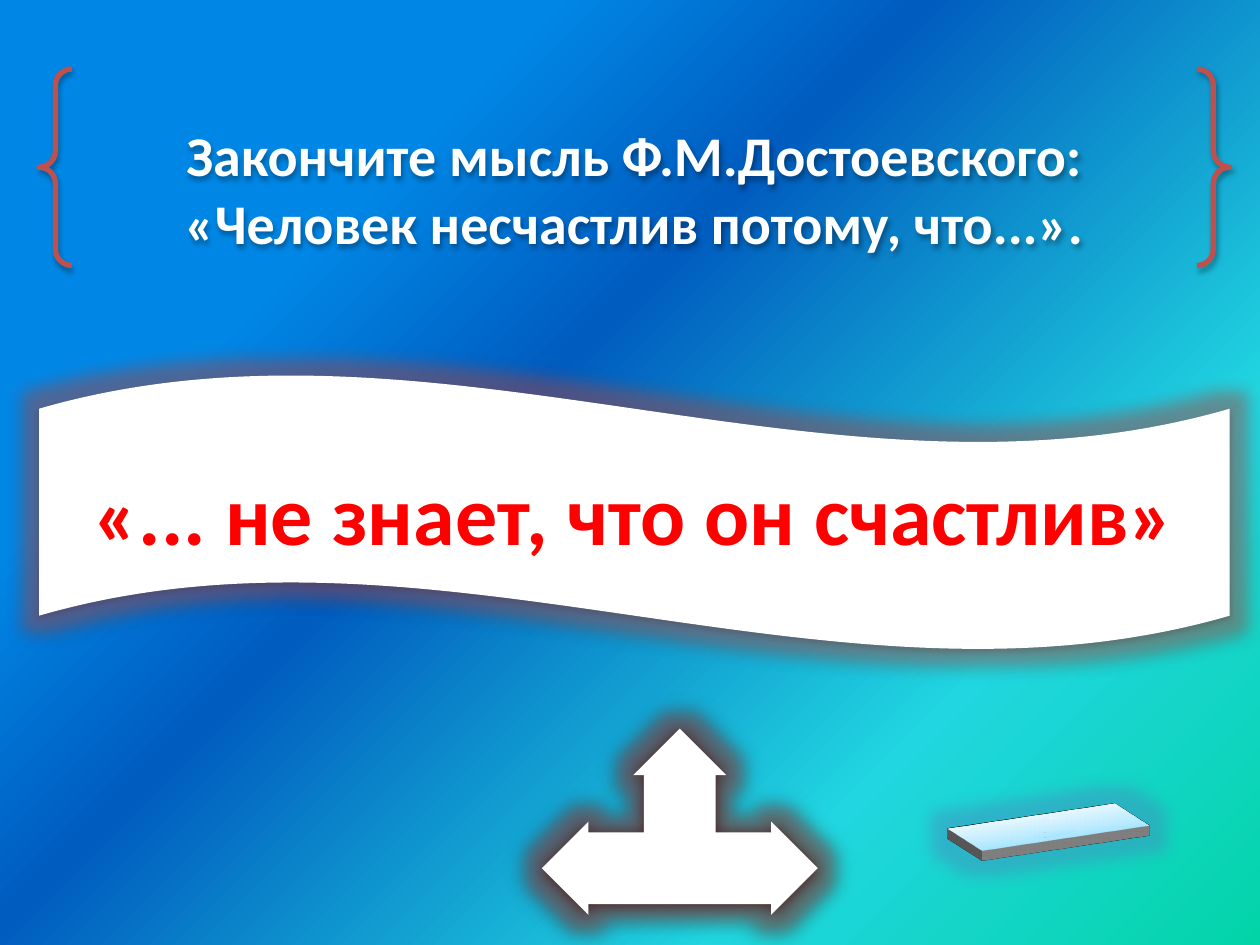
from dataclasses import dataclass
from typing import Optional

from lxml import etree
from pptx import Presentation
from pptx import util as u
from pptx.dml.color import RGBColor
from pptx.enum import shapes, text
from pptx.oxml import parse_xml
from pptx.oxml.ns import nsdecls, qn

WIDTH, HEIGHT = 10, 7.5
COLORS = {
    "white": "FFFFFF", "black": "000000", "red": "FF0000",
    "brick": "C0504D", "steel": "4F81BD",
    "mint": "03D4A8", "aqua": "21D6E0", "navy": "005CBF", "azure": "0087E6",
    "sky": "A7E6FF", "ice": "C1EDFF", "frost": "E7F8FF",
}
KINDS = shapes.MSO_SHAPE


@dataclass(frozen=True)
class Shadow:
    alpha: int
    blur: float
    distance: float
    angle: int = 90


@dataclass(frozen=True)
class Glow:
    color: str
    alpha: int
    radius: float


@dataclass(frozen=True)
class Caption:
    words: str
    size: int
    color: str
    top_margin: float = 0.05
    shadow: Optional[Shadow] = None


@dataclass(frozen=True)
class Figure:
    kind: int
    left: float
    top: float
    width: float
    height: float
    shadow: Shadow
    fill: Optional[str] = None
    line: Optional[str] = None
    line_width: float = 0
    glow: Optional[Glow] = None
    caption: Optional[Caption] = None
    adjustments: tuple = ()


def rgb(name: str) -> RGBColor:
    return RGBColor.from_string(COLORS[name])


def gradient(stops: list, direction: str):
    items = "".join(
        f'<a:gs pos="{share * 1000}"><a:srgbClr val="{COLORS[name]}"/></a:gs>'
        for share, name in stops
    )
    return parse_xml(
        f'<a:gradFill {nsdecls("a")} rotWithShape="1">'
        f"<a:gsLst>{items}</a:gsLst>{direction}</a:gradFill>"
    )


def add_color(parent, name: str, alpha: int) -> None:
    color = etree.SubElement(parent, qn("a:srgbClr"), val=COLORS[name])
    etree.SubElement(color, qn("a:alpha"), val=str(alpha * 1000))


def add_shadow(effects, shadow: Shadow) -> None:
    outer = etree.SubElement(
        effects, qn("a:outerShdw"), blurRad=str(u.Pt(shadow.blur)),
        dist=str(u.Pt(shadow.distance)), dir=str(shadow.angle * 60000),
        algn="ctr", rotWithShape="0",
    )
    add_color(outer, "black", shadow.alpha)


def write_caption(box, caption: Caption) -> None:
    frame = box.text_frame
    frame.word_wrap = True
    frame.margin_top = u.Inches(caption.top_margin)
    frame.vertical_anchor = text.MSO_ANCHOR.MIDDLE
    para = frame.paragraphs[0]
    para.alignment = text.PP_ALIGN.CENTER
    para.font.name = "Calibri"
    para.font.size = u.Pt(caption.size)
    para.font.bold = True
    para.font.color.rgb = rgb(caption.color)
    span = para.add_run()
    span.text = caption.words
    if caption.shadow:
        span.font.fill.solid()
        span.font.fill.fore_color.rgb = rgb(caption.color)
        effects = etree.SubElement(span.font._element, qn("a:effectLst"))
        add_shadow(effects, caption.shadow)


def draw(page, figure: Figure):
    box = page.shapes.add_shape(
        figure.kind,
        u.Inches(figure.left * WIDTH), u.Inches(figure.top * HEIGHT),
        u.Inches(figure.width * WIDTH), u.Inches(figure.height * HEIGHT),
    )
    for index, value in enumerate(figure.adjustments):
        box.adjustments[index] = value
    if figure.fill:
        box.fill.solid()
        box.fill.fore_color.rgb = rgb(figure.fill)
    else:
        box.fill.background()
    if figure.line:
        box.line.color.rgb = rgb(figure.line)
        box.line.width = u.Pt(figure.line_width)
    else:
        box.line.fill.background()
    box.shadow.inherit = False
    effects = box._element.spPr.find(qn("a:effectLst"))
    if figure.glow:
        glow = etree.SubElement(effects, qn("a:glow"), rad=str(u.Pt(figure.glow.radius)))
        add_color(glow, figure.glow.color, figure.glow.alpha)
    add_shadow(effects, figure.shadow)
    if figure.caption:
        write_caption(box, figure.caption)
    return box


def tilt(box) -> None:
    properties = box._element.spPr
    properties.append(parse_xml(
        f'<a:scene3d {nsdecls("a")}><a:camera prst="isometricOffAxis1Top"/>'
        '<a:lightRig rig="threePt" dir="t"/></a:scene3d>'
    ))
    properties.append(parse_xml(f'<a:sp3d {nsdecls("a")} extrusionH="76200"/>'))


def paint_background(page) -> None:
    page.background.fill.solid()
    properties = page._element.cSld.find(qn("p:bg")).find(qn("p:bgPr"))
    stops = [(0, "mint"), (25, "aqua"), (58, "navy"), (75, "azure"), (100, "azure")]
    direction = '<a:path path="circle"><a:fillToRect l="100000" t="100000"/></a:path>'
    properties.replace(properties.find(qn("a:solidFill")), gradient(stops, direction))


FIGURES = [
    Figure(KINDS.DOUBLE_BRACE, 0.031, 0.073, 0.945, 0.208, Shadow(35, 3.1, 1.8),
           line="brick", line_width=3,
           caption=Caption("Закончите мысль Ф.М.Достоевского: «Человек несчастлив потому, что...».",
                           32, "white", 0.25, Shadow(40, 4, 3, 45))),
    Figure(KINDS.WAVE, 0.031, 0.396, 0.945, 0.292, Shadow(32, 3.5, 2.2),
           fill="white", glow=Glow("brick", 40, 18),
           caption=Caption("«... не знает, что он счастлив»", 48, "red")),
    Figure(KINDS.LEFT_RIGHT_UP_ARROW, 0.43, 0.771, 0.219, 0.197, Shadow(100, 8.5, 1),
           fill="white", glow=Glow("brick", 40, 18), adjustments=(0.386, 0.25, 0.25)),
    Figure(KINDS.ACTION_BUTTON_RETURN, 0.758, 0.833, 0.148, 0.084, Shadow(43, 25, 0, 45),
           fill="sky", line="white", line_width=2.75, glow=Glow("steel", 40, 18)),
]


def main() -> None:
    deck = Presentation()
    deck.slide_width, deck.slide_height = u.Inches(WIDTH), u.Inches(HEIGHT)
    page = deck.slides.add_slide(deck.slide_layouts[6])
    paint_background(page)
    *_, button = [draw(page, figure) for figure in FIGURES]
    properties = button._element.spPr
    sheen = gradient([(0, "sky"), (35, "ice"), (100, "frost")], '<a:lin ang="16200000" scaled="1"/>')
    properties.replace(properties.find(qn("a:solidFill")), sheen)
    tilt(button)
    deck.save("out.pptx")


if __name__ == "__main__":
    main()
